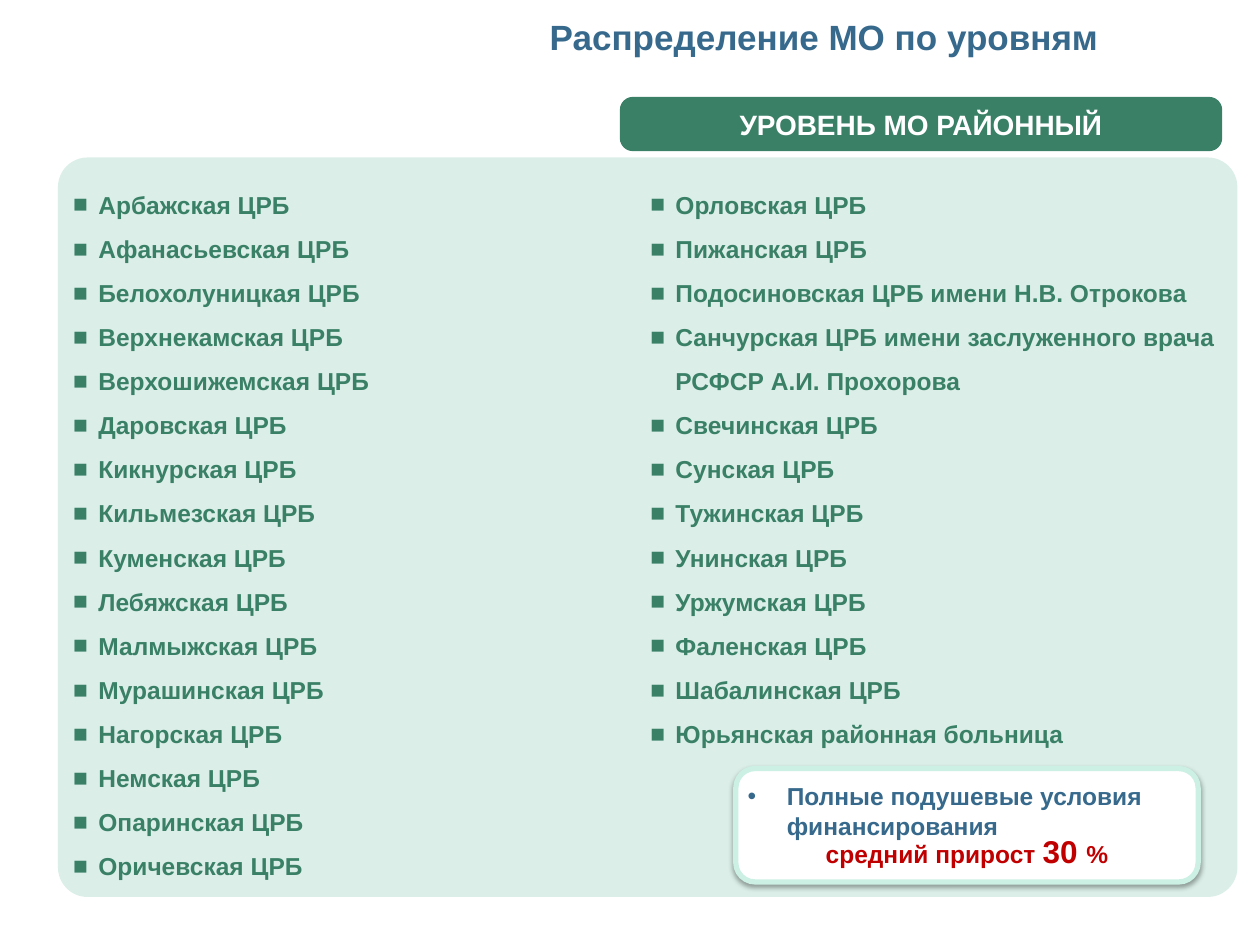
"""Build the slide that lists district hospitals by level."""
from dataclasses import dataclass
from typing import Optional

from lxml import etree
from pptx import Presentation
from pptx import util as u
from pptx.dml.color import RGBColor
from pptx.enum import shapes, text
from pptx.oxml import ns

GREEN, BLUE, RED, WHITE = "3A8067", "36698C", "C00000", "FFFFFF"
PALE, MINT = "DBEFE8", "CCF0E4"
INSET = 3.6

LEFT_HOSPITALS = [f"{name} ЦРБ" for name in (
    "Арбажская", "Афанасьевская", "Белохолуницкая", "Верхнекамская",
    "Верхошижемская", "Даровская", "Кикнурская", "Кильмезская",
    "Куменская", "Лебяжская", "Малмыжская", "Мурашинская",
    "Нагорская", "Немская", "Опаринская", "Оричевская")]
RIGHT_HOSPITALS = [
    "Орловская ЦРБ", "Пижанская ЦРБ", "Подосиновская ЦРБ имени Н.В. Отрокова",
    "Санчурская ЦРБ имени заслуженного врача РСФСР А.И. Прохорова",
    "Свечинская ЦРБ", "Сунская ЦРБ", "Тужинская ЦРБ", "Унинская ЦРБ",
    "Уржумская ЦРБ", "Фаленская ЦРБ", "Шабалинская ЦРБ",
    "Юрьянская районная больница"]


@dataclass
class Rect:
    """Position and size in points."""
    x: float
    y: float
    w: float
    h: float


@dataclass
class Span:
    """Piece of bold text in one style."""
    text: str
    size: float
    color: str


@dataclass
class Para:
    """Paragraph of spans with its layout."""
    spans: list[Span]
    align: text.PP_ALIGN = text.PP_ALIGN.LEFT
    indent: float = 0
    spacing: object = 1.0
    bullet: Optional[str] = None


def rgb(color: str) -> RGBColor:
    """Turn a hex string into a colour."""
    return RGBColor.from_string(color)


def add_xml(parent, tag: str, **attrs: str):
    """Append a DrawingML element and return it."""
    return etree.SubElement(parent, ns.qn(f"a:{tag}"), attrs)


def write(sp, paras: list[Para], anchor=text.MSO_ANCHOR.MIDDLE, inset: float = INSET) -> None:
    """Fill a shape with formatted paragraphs."""
    tf = sp.text_frame
    tf.word_wrap = True
    tf.auto_size = text.MSO_AUTO_SIZE.NONE
    tf.vertical_anchor = anchor
    tf.margin_left = tf.margin_right = tf.margin_top = tf.margin_bottom = u.Pt(inset)
    for i, para in enumerate(paras):
        p = tf.add_paragraph() if i else tf.paragraphs[0]
        pPr = p._p.get_or_add_pPr()
        pPr.set("marL", str(u.Pt(para.indent)))
        pPr.set("indent", str(-u.Pt(para.indent)))
        if para.bullet:
            add_xml(add_xml(pPr, "buClr"), "srgbClr", val=para.spans[0].color)
            add_xml(pPr, "buFont", typeface="Arial")
            add_xml(pPr, "buChar", char=para.bullet)
        p.alignment = para.align
        p.line_spacing = para.spacing
        p.space_before = p.space_after = u.Pt(0)
        for span in para.spans:
            r = p.add_run()
            r.text = span.text
            r.font.name = "Arial"
            r.font.size = u.Pt(span.size)
            r.font.bold = True
            r.font.color.rgb = rgb(span.color)


def place(sp, rect: Rect) -> None:
    """Move and size a placeholder."""
    sp.left, sp.top = u.Pt(rect.x), u.Pt(rect.y)
    sp.width, sp.height = u.Pt(rect.w), u.Pt(rect.h)


def add_card(s, rect: Rect, fill: str, radius: float, line: Optional[str] = None):
    """Draw a rounded card without shadow."""
    sp = s.shapes.add_shape(shapes.MSO_SHAPE.ROUNDED_RECTANGLE, u.Pt(rect.x),
                            u.Pt(rect.y), u.Pt(rect.w), u.Pt(rect.h))
    sp.adjustments[0] = radius
    sp.fill.solid()
    sp.fill.fore_color.rgb = rgb(fill)
    if line:
        sp.line.color.rgb = rgb(line)
        sp.line.width = u.Pt(3)
    else:
        sp.line.fill.background()
    sp.shadow.inherit = False
    return sp


def add_shadow(sp) -> None:
    """Give a card a soft shadow below it."""
    effects = sp._element.spPr.find(ns.qn("a:effectLst"))
    shadow = add_xml(effects, "outerShdw", blurRad=str(u.Pt(3)), dist=str(u.Pt(1.8)),
                     dir="5400000", algn="t", rotWithShape="0")
    add_xml(add_xml(shadow, "srgbClr", val="000000"), "alpha", val="35000")


def main() -> None:
    """Create the deck and save it."""
    center = text.PP_ALIGN.CENTER
    prs = Presentation()
    prs.slide_width, prs.slide_height = u.Pt(720), u.Pt(540)
    s = prs.slides.add_slide(prs.slide_layouts[3])
    title, *columns = s.placeholders

    panel = add_card(s, Rect(33.1, 90, 674, 422.6), PALE, 0.04)
    s.shapes._spTree.remove(panel._element)
    s.shapes._spTree.insert(2, panel._element)

    place(title, Rect(244.8, -6.5, 452.2, 43.2))
    write(title, [Para([Span("Распределение МО по уровням", 20, BLUE)], center, spacing=1.5)])

    for i, (sp, names) in enumerate(zip(columns, (LEFT_HOSPITALS, RIGHT_HOSPITALS))):
        place(sp, Rect(41.8 + i * 329.8, 100, 327, 403))
        write(sp, [Para([Span(name, 14, GREEN)], indent=14.4, spacing=1.5, bullet="■")
                   for name in names], text.MSO_ANCHOR.TOP, 0)

    callout = add_card(s, Rect(420.5, 439.2, 264.2, 64.8), WHITE, 0.17, MINT)
    add_shadow(callout)
    write(callout, [
        Para([Span("Полные подушевые условия финансирования", 14, BLUE)],
             indent=22.3, spacing=u.Pt(16.8), bullet="•"),
        Para([Span("средний прирост ", 14, RED), Span("30 ", 18, RED), Span("%", 14, RED)],
             center, 22.3, u.Pt(16.8))])

    header = add_card(s, Rect(354.2, 55.4, 344.2, 31), GREEN, 0.24)
    write(header, [Para([Span("УРОВЕНЬ МО РАЙОННЫЙ", 16, WHITE)], center)])

    prs.save("out.pptx")


if __name__ == "__main__":
    main()
